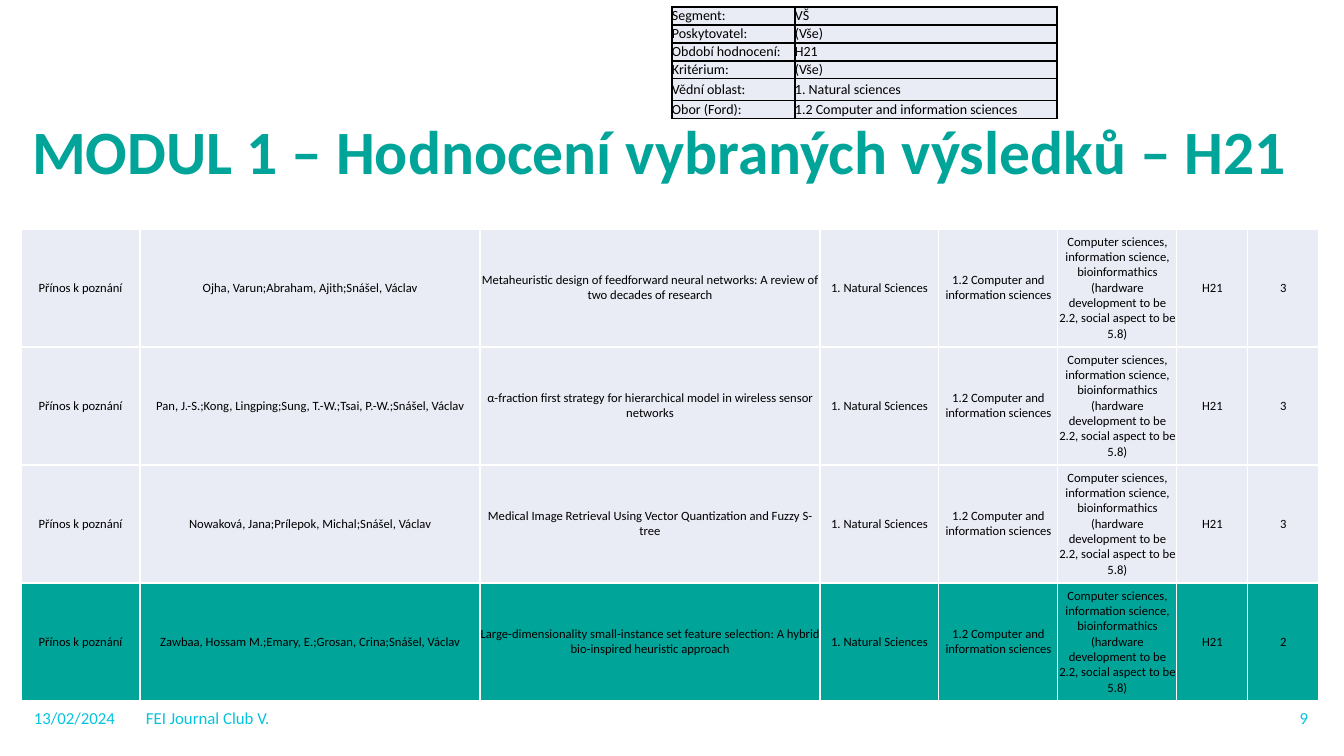
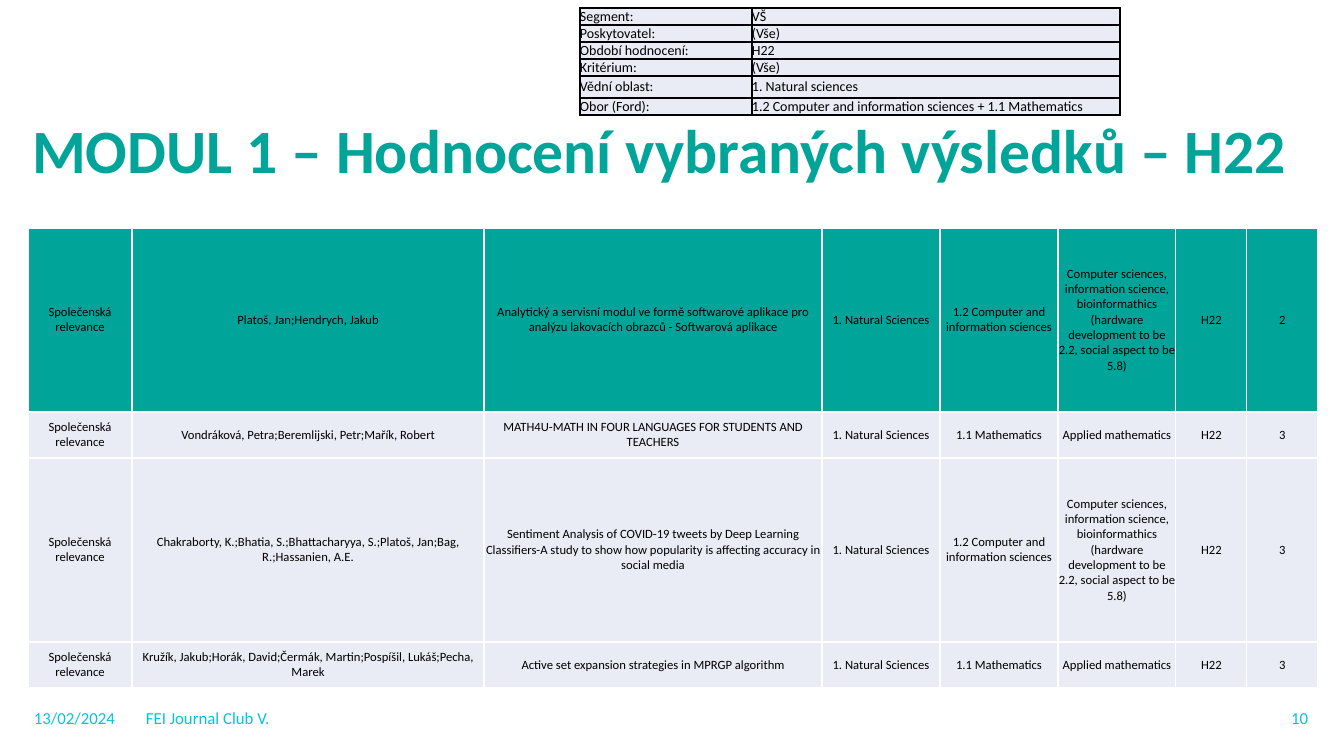
from dataclasses import dataclass

from lxml import etree
from pptx import Presentation
from pptx.dml.color import RGBColor
from pptx.enum.text import MSO_ANCHOR, MSO_AUTO_SIZE, PP_ALIGN
from pptx.oxml.ns import qn
from pptx.util import Emu, Pt

LEFT, CENTER, RIGHT = PP_ALIGN.LEFT, PP_ALIGN.CENTER, PP_ALIGN.RIGHT
TOP, MIDDLE = MSO_ANCHOR.TOP, MSO_ANCHOR.MIDDLE
NO_AUTOFIT = MSO_AUTO_SIZE.NONE

EMU_PER_PX = 914400 / 100.8
SLIDE_SIZE = (1344, 756)
TITLE_ONLY_LAYOUT = 5
FONT = "Calibri"
TEAL, CYAN, PALE, BLACK, WHITE = "00A499", "05C3DE", "E9EBF5", "000000", "FFFFFF"
BORDER_TAGS = ("a:lnL", "a:lnR", "a:lnT", "a:lnB")

TITLE = "MODUL 1 – Hodnocení vybraných výsledků – "
COMPUTING = "1.2 Computer and information sciences"
MATHEMATICS = "1.1 Mathematics"
DISCIPLINES = {
    COMPUTING: "Computer sciences, information science, bioinformathics "
               "(hardware development to be 2.2, social aspect to be 5.8)",
    MATHEMATICS: "Applied mathematics",
}
HIGHLIGHTED_GRADE = 2


@dataclass(frozen=True)
class Result:
    """One evaluated research result."""
    authors: str
    name: str
    field: str
    grade: int


@dataclass(frozen=True)
class Grid:
    """Position of a table and the sizes of its columns and rows in px."""
    left: int
    top: int
    columns: tuple[int, ...]
    rows: tuple[int, ...]


@dataclass(frozen=True)
class Evaluation:
    """Everything that differs between the evaluation slides."""
    period: str
    page: int
    criterion: str
    fields: str
    title_top: int
    filter_grid: Grid
    result_grid: Grid
    results: tuple[Result, ...]


@dataclass(frozen=True)
class FooterItem:
    """Place and alignment of one footer text."""
    left: int
    width: int
    text: str
    align: PP_ALIGN = LEFT


FOOTER_ITEMS = (
    FooterItem(24, 105, "13/02/2024"),
    FooterItem(136, 1096, "FEI Journal Club V."),
    FooterItem(1251, 67, "{page}", RIGHT),
)

EVALUATIONS = (
    Evaluation(
        "H21", 9, "Přínos k poznání", COMPUTING, 116,
        Grid(672, 7, (123, 262), (18, 18, 18, 18, 22, 18)),
        Grid(21, 229, (119, 340, 340, 119, 119, 119, 71, 71), (118,) * 4),
        (
            Result("Ojha, Varun;Abraham, Ajith;Snášel, Václav",
                   "Metaheuristic design of feedforward neural networks: "
                   "A review of two decades of research", COMPUTING, 3),
            Result("Pan, J.-S.;Kong, Lingping;Sung, T.-W.;Tsai, P.-W.;Snášel, Václav",
                   "α-fraction first strategy for hierarchical model in "
                   "wireless sensor networks", COMPUTING, 3),
            Result("Nowaková, Jana;Prílepok, Michal;Snášel, Václav",
                   "Medical Image Retrieval Using Vector Quantization and "
                   "Fuzzy S-tree", COMPUTING, 3),
            Result("Zawbaa, Hossam M.;Emary, E.;Grosan, Crina;Snášel, Václav",
                   "Large-dimensionality small-instance set feature selection: "
                   "A hybrid bio-inspired heuristic approach", COMPUTING, 2),
        ),
    ),
    Evaluation(
        "H22", 10, "Společenská relevance", f"{COMPUTING} + {MATHEMATICS}", 115,
        Grid(580, 8, (172, 368), (17, 17, 17, 17, 22, 17)),
        Grid(28, 228, (104, 352, 338, 118, 118, 118, 71, 71), (184, 46) * 2),
        (
            Result("Platoš, Jan;Hendrych, Jakub",
                   "Analytický a servisní modul ve formě softwarové aplikace pro "
                   "analýzu lakovacích obrazců - Softwarová aplikace", COMPUTING, 2),
            Result("Vondráková, Petra;Beremlijski, Petr;Mařík, Robert",
                   "MATH4U-MATH IN FOUR LANGUAGES FOR STUDENTS AND TEACHERS",
                   MATHEMATICS, 3),
            Result("Chakraborty, K.;Bhatia, S.;Bhattacharyya, S.;Platoš, Jan;Bag, "
                   "R.;Hassanien, A.E.",
                   "Sentiment Analysis of COVID-19 tweets by Deep Learning "
                   "Classifiers-A study to show how popularity is affecting "
                   "accuracy in social media", COMPUTING, 3),
            Result("Kružík, Jakub;Horák, David;Čermák, Martin;Pospíšil, Lukáš;Pecha, "
                   "Marek",
                   "Active set expansion strategies in MPRGP algorithm",
                   MATHEMATICS, 3),
        ),
    ),
)


def px(length: int) -> Emu:
    """Turn pixels into EMU."""
    return Emu(round(length * EMU_PER_PX))


def color(value: str) -> RGBColor:
    """Turn a hex string into a colour."""
    return RGBColor.from_string(value)


def write_text(text_frame, text: str, *, size: int, fill: str, bold: bool = False,
               align: PP_ALIGN = LEFT, line_spacing: float = 1.0) -> None:
    """Write one formatted paragraph into a text frame."""
    text_frame.word_wrap = True
    paragraph = text_frame.paragraphs[0]
    paragraph.alignment = align
    paragraph.line_spacing = line_spacing
    run = paragraph.add_run()
    run.text = text
    run.font.name = FONT
    run.font.size = Pt(size)
    run.font.bold = bold
    run.font.color.rgb = color(fill)


def set_borders(cell, line: str) -> None:
    """Give a cell a one-point border on every side."""
    properties = cell._tc.get_or_add_tcPr()
    for position, tag in enumerate(BORDER_TAGS):
        border = etree.Element(qn(tag), w=str(Pt(1)))
        solid = etree.SubElement(border, qn("a:solidFill"))
        etree.SubElement(solid, qn("a:srgbClr"), val=line)
        properties.insert(position, border)


def add_grid(slide, grid: Grid, texts: list[tuple[str, ...]], fills: list[str], *,
             line: str, size: int, align: PP_ALIGN) -> None:
    """Draw a table with one fill per row."""
    table = slide.shapes.add_table(
        len(grid.rows), len(grid.columns), px(grid.left), px(grid.top),
        px(sum(grid.columns)), px(sum(grid.rows))).table
    table.first_row = table.horz_banding = False
    for column, width in zip(table.columns, grid.columns):
        column.width = px(width)
    for row, height, row_texts, fill in zip(table.rows, grid.rows, texts, fills):
        row.height = px(height)
        for cell, text in zip(row.cells, row_texts):
            cell.margin_left = cell.margin_right = 0
            cell.margin_top = cell.margin_bottom = 0
            cell.vertical_anchor = MIDDLE
            cell.fill.solid()
            cell.fill.fore_color.rgb = color(fill)
            set_borders(cell, line)
            write_text(cell.text_frame, text, size=size, fill=BLACK, align=align)


def add_title(slide, evaluation: Evaluation) -> None:
    """Place and fill the title placeholder."""
    title = slide.shapes.title
    title.left, title.top = px(22), px(evaluation.title_top)
    title.width, title.height = px(1300), px(113)
    title.text_frame.auto_size = NO_AUTOFIT
    title.text_frame.vertical_anchor = TOP
    write_text(title.text_frame, TITLE + evaluation.period, size=44, fill=TEAL,
               bold=True, line_spacing=0.9)


def add_footer(slide, page: int) -> None:
    """Draw the date, the event name and the page number."""
    for item in FOOTER_ITEMS:
        box = slide.shapes.add_textbox(px(item.left), px(701), px(item.width), px(34))
        box.text_frame.vertical_anchor = MIDDLE
        write_text(box.text_frame, item.text.format(page=page), size=12, fill=CYAN,
                   align=item.align)


def add_filters(slide, evaluation: Evaluation) -> None:
    """Draw the table of filters above the title."""
    filters = [
        ("Segment:", "VŠ"),
        ("Poskytovatel:", "(Vše)"),
        ("Období hodnocení:", evaluation.period),
        ("Kritérium:", "(Vše)"),
        ("Vědní oblast:", "1. Natural sciences"),
        ("Obor (Ford):", evaluation.fields),
    ]
    add_grid(slide, evaluation.filter_grid, filters, [PALE] * len(filters),
             line=BLACK, size=10, align=LEFT)


def add_results(slide, evaluation: Evaluation) -> None:
    """Draw the table of results with the best grade highlighted."""
    texts = [
        (evaluation.criterion, result.authors, result.name, "1. Natural Sciences",
         result.field, DISCIPLINES[result.field], evaluation.period, str(result.grade))
        for result in evaluation.results
    ]
    fills = [TEAL if result.grade == HIGHLIGHTED_GRADE else PALE
             for result in evaluation.results]
    add_grid(slide, evaluation.result_grid, texts, fills,
             line=WHITE, size=9, align=CENTER)


def main() -> None:
    """Build and save the presentation."""
    presentation = Presentation()
    presentation.slide_width, presentation.slide_height = map(px, SLIDE_SIZE)
    layout = presentation.slide_layouts[TITLE_ONLY_LAYOUT]
    for evaluation in EVALUATIONS:
        slide = presentation.slides.add_slide(layout)
        add_footer(slide, evaluation.page)
        add_title(slide, evaluation)
        add_filters(slide, evaluation)
        add_results(slide, evaluation)
    presentation.save("out.pptx")


if __name__ == "__main__":
    main()
